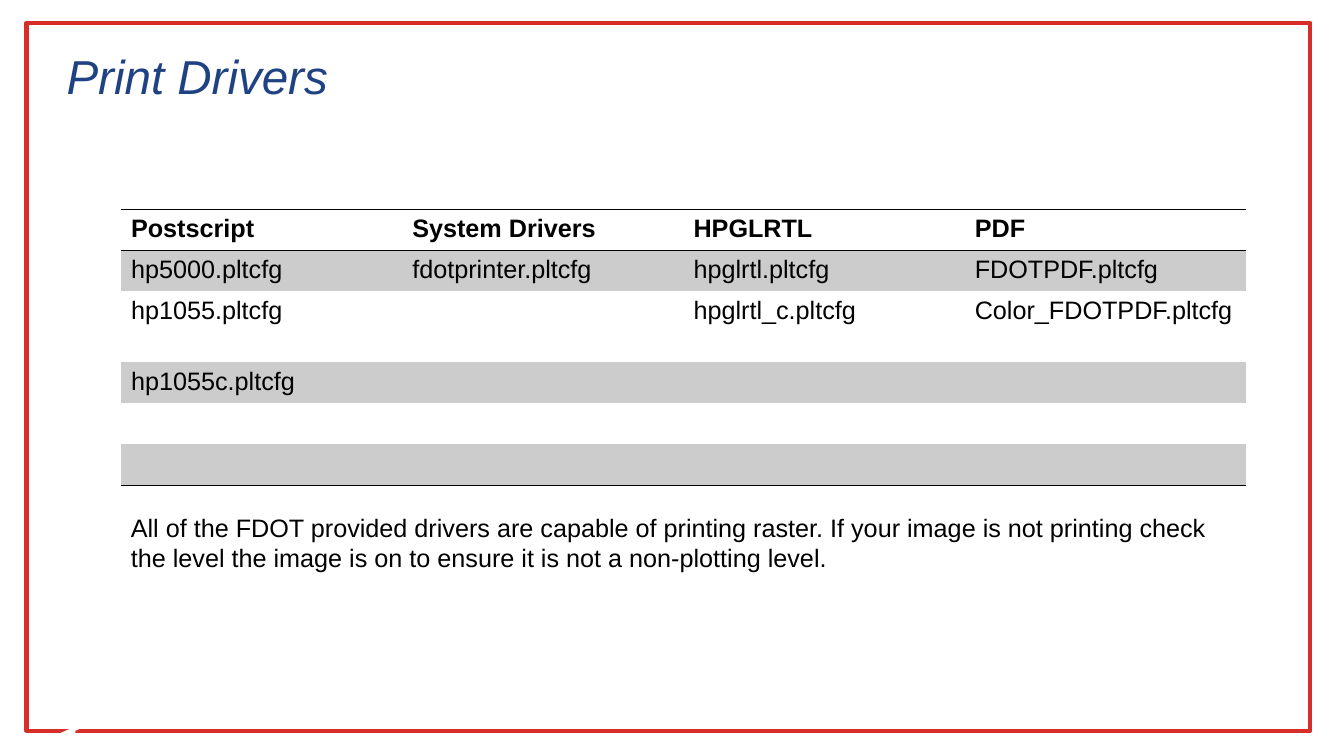
"""Build the Print Drivers slide with its table of driver files."""
from lxml.etree import SubElement
from pptx import Presentation
from pptx.dml.color import RGBColor
from pptx.enum.shapes import MSO_CONNECTOR, MSO_SHAPE
from pptx.enum.text import MSO_ANCHOR, PP_ALIGN
from pptx.oxml.ns import qn
from pptx.util import Pt

TITLE = "Print Drivers"
DRIVERS = [
    ("Postscript", "System Drivers", "HPGLRTL", "PDF"),
    ("hp5000.pltcfg", "fdotprinter.pltcfg", "hpglrtl.pltcfg", "FDOTPDF.pltcfg"),
    ("hp1055.pltcfg", "", "hpglrtl_c.pltcfg", "Color_FDOTPDF.pltcfg"),
    ("hp1055c.pltcfg", "", "", ""),
    ("", "", "", ""),
    ("", "", "", ""),
]
NOTE = (
    "All of the FDOT provided drivers are capable of printing raster. "
    "If your image is not printing check the level the image is on "
    "to ensure it is not a non-plotting level."
)
CORNER_STROKES = [((53.3, 521.3), (40.3, 527), 4), ((58.3, 519.1), (44.6, 524.9), 1.75)]
ROW_HEIGHT, TALL_ROW_HEIGHT, TALL_ROW = 29.3, 50.6, 2
COLUMN_WIDTH = 200.9
TABLE_LEFT, TABLE_TOP = 86.4, 149.6
NO_STYLE = "{2D5ABB26-0587-4C30-8999-92F81FD0307C}"
RED, BLUE, BLACK, WHITE, BAND = "D72E2A", "1F4283", "000000", "FFFFFF", "CCCCCC"


def color(value):
    return RGBColor.from_string(value)


def add_run(paragraph, text, size, shade, bold=False, italic=False):
    run = paragraph.add_run()
    run.text = text
    font = run.font
    font.name, font.size, font.bold, font.italic = "Arial", Pt(size), bold, italic
    font.color.rgb = color(shade)


def add_border(cell, tag):
    line = SubElement(cell._tc.get_or_add_tcPr(), qn(tag), w=str(Pt(1)))
    fill = SubElement(line, qn("a:solidFill"))
    SubElement(fill, qn("a:srgbClr"), val=BLACK)


def add_frame(slide):
    frame = slide.shapes.add_shape(MSO_SHAPE.RECTANGLE, Pt(18.9), Pt(16.4), Pt(917.1), Pt(505.5))
    frame.shadow.inherit = False
    frame.fill.background()
    frame.line.color.rgb = color(RED)
    frame.line.width = Pt(3)
    for start, end, width in CORNER_STROKES:
        points = [Pt(value) for value in start + end]
        stroke = slide.shapes.add_connector(MSO_CONNECTOR.STRAIGHT, *points)
        stroke.line.color.rgb = color(WHITE)
        stroke.line.width = Pt(width)
        SubElement(stroke._element.spPr, qn("a:effectLst"))


def format_title(title):
    title.left, title.top, title.width, title.height = Pt(40.3), Pt(33.1), Pt(873.4), Pt(48.2)
    title.text_frame.vertical_anchor = MSO_ANCHOR.MIDDLE
    paragraph = title.text_frame.paragraphs[0]
    paragraph.alignment = PP_ALIGN.LEFT
    paragraph.line_spacing = 0.85
    add_run(paragraph, TITLE, 34, BLUE, italic=True)


def add_driver_table(slide):
    heights = [TALL_ROW_HEIGHT if i == TALL_ROW else ROW_HEIGHT for i in range(len(DRIVERS))]
    columns = len(DRIVERS[0])
    graphic = slide.shapes.add_table(
        len(DRIVERS), columns, Pt(TABLE_LEFT), Pt(TABLE_TOP),
        Pt(COLUMN_WIDTH * columns), Pt(sum(heights)),
    )
    for style in graphic._element.iter(qn("a:tableStyleId")):
        style.text = NO_STYLE
    table = graphic.table
    for column in table.columns:
        column.width = Pt(COLUMN_WIDTH)
    for row_index, names in enumerate(DRIVERS):
        table.rows[row_index].height = Pt(heights[row_index])
        header = row_index == 0
        for column_index, name in enumerate(names):
            cell = table.cell(row_index, column_index)
            if name:
                add_run(cell.text_frame.paragraphs[0], name, 18, BLACK, bold=header)
            if header:
                add_border(cell, "a:lnT")
            if header or row_index == len(DRIVERS) - 1:
                add_border(cell, "a:lnB")
            if row_index % 2:
                cell.fill.solid()
                cell.fill.fore_color.rgb = color(BAND)
            else:
                cell.fill.background()


def add_note(slide):
    box = slide.shapes.add_textbox(Pt(TABLE_LEFT), Pt(362.2), Pt(792), Pt(51))
    box.text_frame.word_wrap = True
    add_run(box.text_frame.paragraphs[0], NOTE, 18, BLACK)


def main():
    presentation = Presentation()
    presentation.slide_width, presentation.slide_height = Pt(960), Pt(540)
    slide = presentation.slides.add_slide(presentation.slide_layouts[5])
    add_frame(slide)
    format_title(slide.shapes.title)
    add_driver_table(slide)
    add_note(slide)
    presentation.save("out.pptx")


if __name__ == "__main__":
    main()
